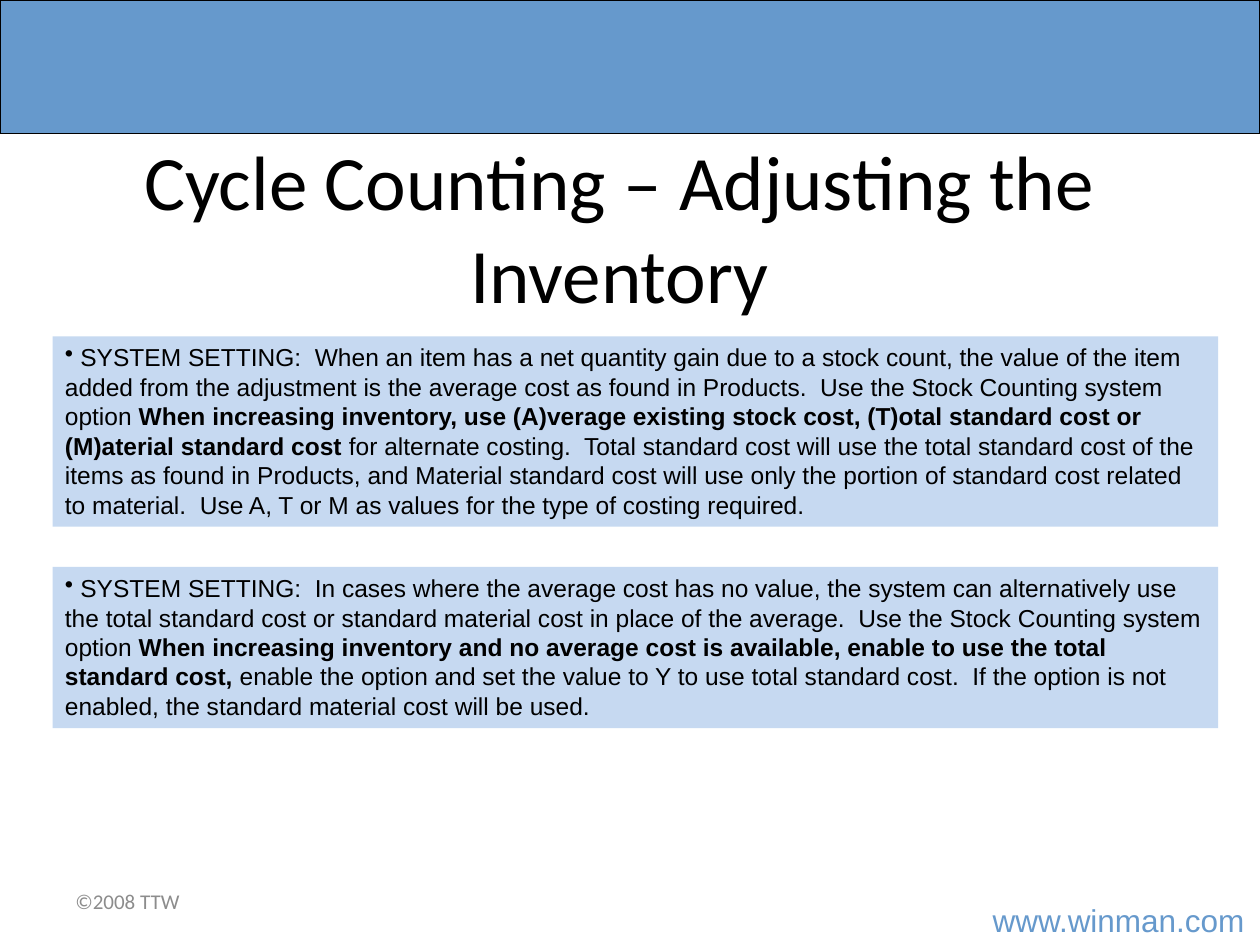
from dataclasses import dataclass

from lxml import etree
from pptx import Presentation
from pptx.dml.color import RGBColor
from pptx.enum import shapes, text
from pptx.oxml.ns import qn
from pptx.util import Cm, Pt

COLOURS = {
    "banner": "6699CC",
    "panel": "C6D9F1",
    "black": "000000",
    "grey": "8C8C8C",
}


@dataclass
class Box:
    """Position and size in centimetres."""
    left: float
    top: float
    width: float
    height: float

    def lengths(self) -> tuple:
        return Cm(self.left), Cm(self.top), Cm(self.width), Cm(self.height)


@dataclass
class Setting:
    box: Box
    intro: str
    option: str
    explanation: str


SETTINGS = [
    Setting(
        Box(1.06, 6.78, 23.5, 3.84),
        " SYSTEM SETTING:  When an item has a net quantity gain due to a stock count, "
        "the value of the item added from the adjustment is the average cost as found "
        "in Products.  Use the Stock Counting system option ",
        "When increasing inventory, use (A)verage existing stock cost, "
        "(T)otal standard cost or (M)aterial standard cost",
        " for alternate costing.  Total standard cost will use the total standard cost "
        "of the items as found in Products, and Material standard cost will use only "
        "the portion of standard cost related to material.  Use A, T or M as values "
        "for the type of costing required.",
    ),
    Setting(
        Box(1.06, 11.43, 23.5, 3.25),
        " SYSTEM SETTING:  In cases where the average cost has no value, the system can "
        "alternatively use the total standard cost or standard material cost in place "
        "of the average.  Use the Stock Counting system option ",
        "When increasing inventory and no average cost is available, "
        "enable to use the total standard cost, ",
        "enable the option and set the value to Y to use total standard cost.  If the "
        "option is not enabled, the standard material cost will be used.",
    ),
]


def colour(name: str) -> RGBColor:
    return RGBColor.from_string(COLOURS[name])


def format_font(font, name: str, size: float, colour_name: str) -> None:
    font.name = name
    font.size = Pt(size)
    font.color.rgb = colour(colour_name)


def add_rectangle(slide, box: Box, fill: str):
    shape = slide.shapes.add_shape(shapes.MSO_SHAPE.RECTANGLE, *box.lengths())
    shape.shadow.inherit = False
    shape.fill.solid()
    shape.fill.fore_color.rgb = colour(fill)
    shape.line.fill.background()
    return shape


def add_banner(slide) -> None:
    banner = add_rectangle(slide, Box(0, 0, 25.4, 2.69), "banner")
    banner.line.color.rgb = colour("black")
    banner.line.width = Pt(0.75)


def add_title(slide, box: Box, title: str) -> None:
    shape = slide.shapes.title
    shape.left, shape.top, shape.width, shape.height = box.lengths()
    frame = shape.text_frame
    frame.text = title
    frame.vertical_anchor = text.MSO_ANCHOR.MIDDLE
    paragraph = frame.paragraphs[0]
    paragraph.alignment = text.PP_ALIGN.CENTER
    format_font(paragraph.runs[0].font, "Calibri", 44, "black")


def add_label(slide, box: Box, label: str, font: str, size: float,
              colour_name: str, anchor, wrap: bool):
    frame = slide.shapes.add_textbox(*box.lengths()).text_frame
    frame.word_wrap = wrap
    frame.vertical_anchor = anchor
    frame.text = label
    format_font(frame.paragraphs[0].runs[0].font, font, size, colour_name)


def add_setting(slide, setting: Setting) -> None:
    """Draw a panel with one bulleted paragraph, its option name in bold."""
    frame = add_rectangle(slide, setting.box, "panel").text_frame
    frame.word_wrap = True
    frame.auto_size = text.MSO_AUTO_SIZE.SHAPE_TO_FIT_TEXT
    frame.vertical_anchor = text.MSO_ANCHOR.TOP
    paragraph = frame.paragraphs[0]
    paragraph.alignment = text.PP_ALIGN.LEFT
    bullet = etree.SubElement(paragraph._p.get_or_add_pPr(), qn("a:buChar"))
    bullet.set("char", "•")
    for words in (setting.intro, setting.option, setting.explanation):
        run = paragraph.add_run()
        run.text = words
        format_font(run.font, "Arial", 14, "black")
        run.font.bold = words == setting.option


def main() -> None:
    presentation = Presentation()
    presentation.slide_width, presentation.slide_height = Cm(25.4), Cm(19.05)
    slide = presentation.slides.add_slide(presentation.slide_layouts[5])

    add_banner(slide)
    add_label(slide, Box(19.76, 18.03, 5.64, 1.02), "www.winman.com",
              "Arial", 18, "banner", text.MSO_ANCHOR.TOP, wrap=False)
    add_title(slide, Box(1.06, 2.97, 22.86, 3.18),
              "Cycle Counting – Adjusting the Inventory")
    add_label(slide, Box(1.27, 17.66, 5.93, 1.01), "©2008 TTW",
              "Calibri", 12, "grey", text.MSO_ANCHOR.MIDDLE, wrap=True)
    for setting in SETTINGS:
        add_setting(slide, setting)

    presentation.save("out.pptx")


if __name__ == "__main__":
    main()
